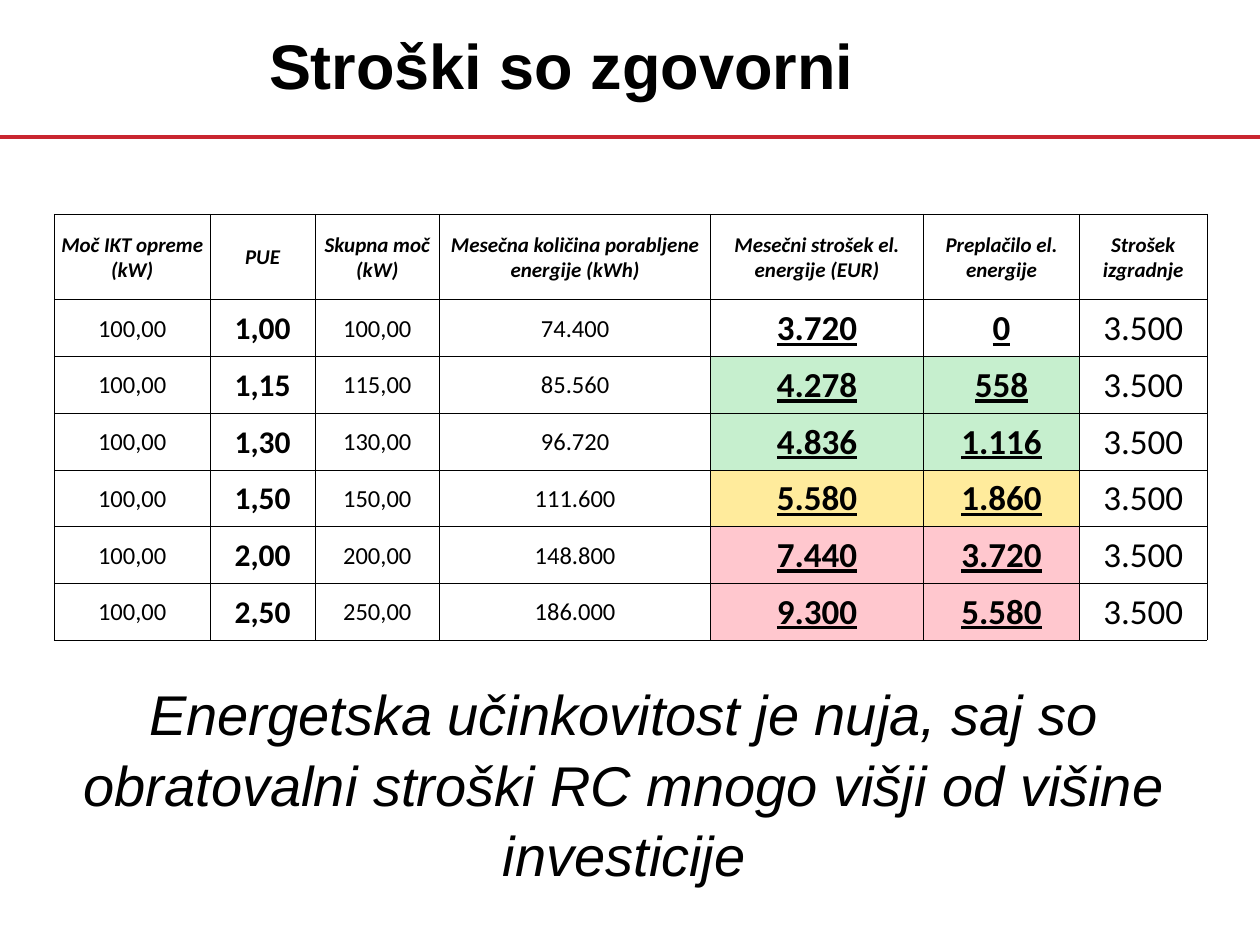
from lxml.etree import SubElement
from pptx import Presentation
from pptx.dml.color import RGBColor
from pptx.enum.shapes import MSO_CONNECTOR as Connector
from pptx.enum.text import MSO_ANCHOR as Anchor, PP_ALIGN as Align
from pptx.oxml.ns import qn
from pptx.util import Inches, Pt

BLACK, RED = "000000", "C92630"
GREEN, YELLOW, PINK = "C6EFCE", "FFEB9C", "FFC7CE"

COLUMN_WIDTHS = [1.24, 0.83, 0.99, 2.15, 1.69, 1.24, 1.01]
HEADER_HEIGHT, ROW_HEIGHT = 0.68, 0.45
HEADERS = [
    "Moč IKT opreme (kW)", "PUE", "Skupna moč (kW)",
    "Mesečna količina porabljene energije (kWh)",
    "Mesečni strošek el. energije (EUR)",
    "Preplačilo el. energije", "Strošek izgradnje",
]
ROWS = [
    ["100,00", "1,00", "100,00", "74.400", "3.720", "0", "3.500"],
    ["100,00", "1,15", "115,00", "85.560", "4.278", "558", "3.500"],
    ["100,00", "1,30", "130,00", "96.720", "4.836", "1.116", "3.500"],
    ["100,00", "1,50", "150,00", "111.600", "5.580", "1.860", "3.500"],
    ["100,00", "2,00", "200,00", "148.800", "7.440", "3.720", "3.500"],
    ["100,00", "2,50", "250,00", "186.000", "9.300", "5.580", "3.500"],
]
COST_FILLS = [None, GREEN, GREEN, YELLOW, PINK, PINK]
COST_COLUMNS = (4, 5)

HEADER_STYLE = dict(size=12, bold=True, italic=True)
PLAIN = dict(size=14)
PUE = dict(size=18, bold=True)
COST = dict(size=20, bold=True, underline=True)
BUILD = dict(size=20)
COLUMN_STYLES = [PLAIN, PUE, PLAIN, PLAIN, COST, COST, BUILD]


def color(value):
    return RGBColor.from_string(value)


def write_centered(text_frame, text, name, size, bold=False, italic=False, underline=False):
    paragraph = text_frame.paragraphs[0]
    paragraph.text = text
    paragraph.alignment = Align.CENTER
    font = paragraph.font
    font.name, font.size = name, Pt(size)
    font.bold, font.italic, font.underline = bold, italic, underline
    font.color.rgb = color(BLACK)
    return paragraph


def set_borders(cell):
    """Draw thin black borders; call before the cell fill is set."""
    properties = cell._tc.get_or_add_tcPr()
    for side in ("a:lnL", "a:lnR", "a:lnT", "a:lnB"):
        line = SubElement(properties, qn(side), w=str(Pt(0.5)))
        fill = SubElement(line, qn("a:solidFill"))
        SubElement(fill, qn("a:srgbClr"), val=BLACK)


def format_cell(cell, text, style, fill=None):
    cell.margin_left = cell.margin_right = cell.margin_top = Inches(0.01)
    cell.margin_bottom = 0
    cell.vertical_anchor = Anchor.MIDDLE
    write_centered(cell.text_frame, text, "Calibri", **style)
    set_borders(cell)
    if fill:
        cell.fill.solid()
        cell.fill.fore_color.rgb = color(fill)
    else:
        cell.fill.background()


def add_rule(slide):
    rule = slide.shapes.add_connector(
        Connector.STRAIGHT, Inches(-0.02), Inches(1.09), Inches(10), Inches(1.09))
    rule.line.color.rgb = color(RED)
    rule.line.width = Pt(2.25)
    SubElement(rule._element.spPr, qn("a:effectLst"))


def set_title(slide, text):
    title = slide.shapes.title
    title.left, title.top = Inches(0.47), Inches(0.16)
    title.width, title.height = Inches(7.97), Inches(0.7)
    title.text_frame.vertical_anchor = Anchor.MIDDLE
    write_centered(title.text_frame, text, "Arial", 36, bold=True)


def add_cost_table(slide):
    height = HEADER_HEIGHT + ROW_HEIGHT * len(ROWS)
    table = slide.shapes.add_table(
        len(ROWS) + 1, len(HEADERS), Inches(0.43), Inches(1.7),
        Inches(sum(COLUMN_WIDTHS)), Inches(height)).table
    table.horz_banding = table.first_row = False
    for column, width in zip(table.columns, COLUMN_WIDTHS):
        column.width = Inches(width)
    for index, row in enumerate(table.rows):
        row.height = Inches(ROW_HEIGHT if index else HEADER_HEIGHT)
    for column, header in enumerate(HEADERS):
        format_cell(table.cell(0, column), header, HEADER_STYLE)
    for row, (values, cost_fill) in enumerate(zip(ROWS, COST_FILLS), start=1):
        for column, (value, style) in enumerate(zip(values, COLUMN_STYLES)):
            fill = cost_fill if column in COST_COLUMNS else None
            format_cell(table.cell(row, column), value, style, fill)


def add_conclusion(slide, text):
    box = slide.shapes.add_textbox(Inches(0.23), Inches(5.32), Inches(9.45), Inches(1.37))
    box.text_frame.word_wrap = True
    paragraph = write_centered(box.text_frame, text, "Arial", 32, italic=True)
    paragraph.line_spacing = 1.05


def main():
    presentation = Presentation()
    presentation.slide_width, presentation.slide_height = Inches(10), Inches(7.5)
    slide = presentation.slides.add_slide(presentation.slide_layouts[5])
    add_rule(slide)
    set_title(slide, "Stroški so zgovorni")
    add_cost_table(slide)
    add_conclusion(slide, "Energetska učinkovitost je nuja, saj so obratovalni "
                          "stroški RC mnogo višji od višine investicije")
    presentation.save("out.pptx")


if __name__ == "__main__":
    main()
